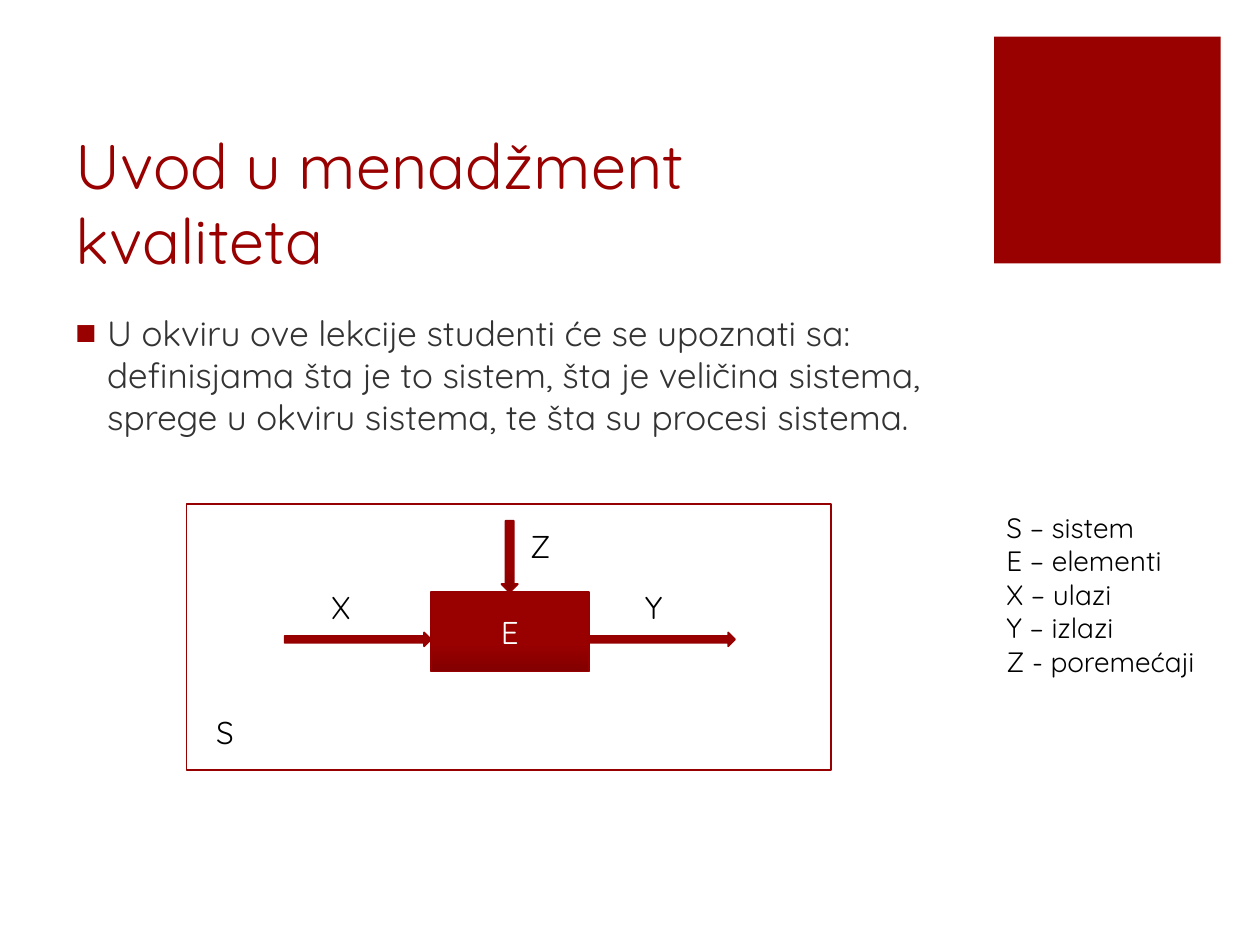
"""Build the slide that introduces a system with its inputs, outputs and disturbances."""
from lxml import etree
from pptx import Presentation
from pptx.dml.color import RGBColor
from pptx.enum.shapes import MSO_SHAPE
from pptx.enum.text import MSO_ANCHOR, PP_ALIGN
from pptx.oxml.ns import qn
from pptx.util import Cm, Pt

RED, EDGE, DARK = "990000", "960000", "830000"


def color(value):
    return RGBColor.from_string(value)


def write(shape, text, size, ink, anchor=MSO_ANCHOR.TOP, align=PP_ALIGN.LEFT):
    frame = shape.text_frame
    frame.word_wrap = True
    frame.vertical_anchor = anchor
    frame.text = text
    for para in frame.paragraphs:
        para.alignment = align
        for span in para.runs:
            span.font.name = "Quicksand"
            span.font.size = Pt(size)
            span.font.color.rgb = color(ink)


deck = Presentation()
deck.slide_width, deck.slide_height = Cm(25.4), Cm(19.05)
page = deck.slides.add_slide(deck.slide_layouts[6])
shapes = page.shapes

corner = shapes.add_shape(MSO_SHAPE.RECTANGLE, Cm(20.04), Cm(0.74), Cm(4.57), Cm(4.57))
corner.shadow.inherit = False
corner.fill.solid()
corner.fill.fore_color.rgb = color(RED)
corner.line.fill.background()

title = shapes.add_textbox(Cm(1.27), Cm(2.54), Cm(18.08), Cm(3.18))
write(title, "Uvod u menadžment kvaliteta", 36, RED, MSO_ANCHOR.BOTTOM)

body = shapes.add_textbox(Cm(1.27), Cm(6.15), Cm(18.08), Cm(10.87))
write(body, "U okviru ove lekcije studenti će se upoznati sa: definisjama šta je to sistem, "
      "šta je veličina sistema, sprege u okviru sistema, te šta su procesi sistema.", 20, "333333")
properties = body.text_frame.paragraphs[0]._p.get_or_add_pPr()
properties.set("marL", str(Cm(0.64)))
properties.set("indent", str(-Cm(0.64)))
bullet_color = etree.SubElement(properties, qn("a:buClr"))
etree.SubElement(bullet_color, qn("a:srgbClr"), val=RED)
etree.SubElement(properties, qn("a:buFont"), typeface="Arial")
etree.SubElement(properties, qn("a:buChar"), char="■")

system = shapes.add_shape(MSO_SHAPE.RECTANGLE, Cm(3.76), Cm(10.16), Cm(13), Cm(5.36))
system.shadow.inherit = False
system.fill.background()
system.line.color.rgb = color(EDGE)
system.line.width = Pt(1)

parts = [
    (MSO_SHAPE.RECTANGLE, 8.69, 11.94, 3.18, 1.6, "E"),
    (MSO_SHAPE.RIGHT_ARROW, 5.74, 12.75, 2.95, 0.28, ""),
    (MSO_SHAPE.RIGHT_ARROW, 11.87, 12.75, 2.95, 0.28, ""),
    (MSO_SHAPE.DOWN_ARROW, 10.11, 10.5, 0.33, 1.44, ""),
]
for kind, left, top, width, height, label in parts:
    part = shapes.add_shape(kind, Cm(left), Cm(top), Cm(width), Cm(height))
    part.shadow.inherit = False
    part.fill.gradient()
    part.fill.gradient_angle = 90
    for stop, position, shade in zip(part.fill.gradient_stops, (0, 0.35), (DARK, RED)):
        stop.position = position
        stop.color.rgb = color(shade)
    part.line.color.rgb = color(EDGE)
    part.line.width = Pt(1)
    if label:
        write(part, label, 18, "FFFFFF", MSO_ANCHOR.MIDDLE, PP_ALIGN.CENTER)

for letter, left, top in [("S", 4.11, 14.25), ("X", 6.43, 11.73), ("Y", 12.75, 11.73), ("Z", 10.44, 10.5)]:
    box = shapes.add_textbox(Cm(left), Cm(top), Cm(0.74), Cm(1.02))
    write(box, letter, 18, "000000")

legend = shapes.add_textbox(Cm(20.04), Cm(10.16), Cm(4.57), Cm(3.68))
write(legend, "S – sistem\nE – elementi\nX – ulazi\nY – izlazi\nZ - poremećaji", 16, "000000")

deck.save("out.pptx")
